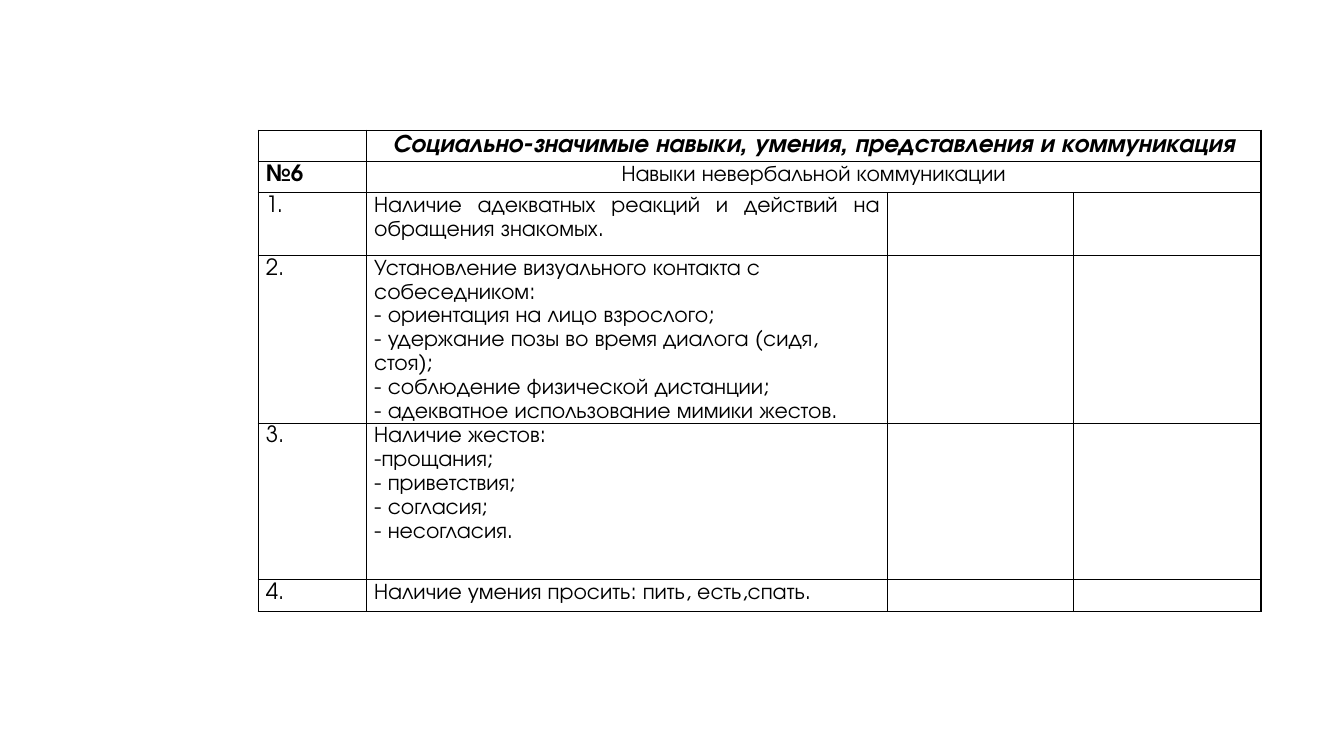
from lxml import etree
from pptx import Presentation
from pptx.dml.color import RGBColor
from pptx.enum.text import PP_ALIGN
from pptx.oxml.ns import qn
from pptx.util import Cm, Pt

LEFT, MID, JUST = PP_ALIGN.LEFT, PP_ALIGN.CENTER, PP_ALIGN.JUSTIFY
FACE = "TeX Gyre Adventor"
INK = "000000"


def color(code):
    return RGBColor.from_string(code)


def frame(cell):
    """Draw the four borders of a cell."""
    props = cell._tc.get_or_add_tcPr()
    for pos, side in enumerate(("a:lnL", "a:lnR", "a:lnT", "a:lnB")):
        line = etree.Element(qn(side), w=str(Pt(1)))
        fill = etree.SubElement(line, qn("a:solidFill"))
        etree.SubElement(fill, qn("a:srgbClr"), val=INK)
        props.insert(pos, line)


deck = Presentation()
deck.slide_width, deck.slide_height = Cm(33.87), Cm(19.05)
slide = deck.slides.add_slide(deck.slide_layouts[6])

# Table grid
widths = [2.73, 13.13, 4.68, 4.73]
heights = [0.79, 0.79, 1.58, 3.79, 3.95, 0.79]
shape = slide.shapes.add_table(len(heights), len(widths), Cm(6.51), Cm(3.28),
                               Cm(sum(widths)), Cm(sum(heights)))
table = shape.table
table.first_row = table.horz_banding = False
for col, width in zip(table.columns, widths):
    col.width = Cm(width)
for row, height in zip(table.rows, heights):
    row.height = Cm(height)

# Plain bordered cells
for cell in table.iter_cells():
    cell.margin_left = cell.margin_right = Cm(0.19)
    cell.margin_top = cell.margin_bottom = 0
    cell.fill.background()
    frame(cell)
    end = cell.text_frame.paragraphs[0]._p.get_or_add_endParaRPr()
    end.set("sz", "1600")
for row in (0, 1):
    table.cell(row, 1).merge(table.cell(row, 3))

# Wording: row, column, alignment, size, bold, italic, paragraphs
texts = [
    (0, 1, MID, 18, True, True,
     ["Социально-значимые навыки, умения, представления и коммуникация"]),
    (1, 0, JUST, 16, True, False, ["№6"]),
    (1, 1, MID, 16, False, False, ["Навыки невербальной коммуникации"]),
    (2, 1, JUST, 16, False, False,
     ["Наличие адекватных реакций и действий на обращения знакомых."]),
    (3, 1, LEFT, 16, False, False,
     ["Установление визуального контакта с собеседником:",
      "- ориентация на лицо взрослого;",
      "- удержание позы во время диалога (сидя, стоя);",
      "- соблюдение физической дистанции;",
      "- адекватное использование мимики жестов."]),
    (4, 1, JUST, 16, False, False,
     ["Наличие жестов:", "-прощания;", "- приветствия;", "- согласия;",
      "- несогласия."]),
    (5, 1, JUST, 16, False, False,
     ["Наличие умения просить: пить, есть,спать."]),
]
for num in range(1, 5):
    texts.append((num + 1, 0, JUST, 16, False, False, [f"{num}."]))

for row, col, align, size, bold, slant, lines in texts:
    body = table.cell(row, col).text_frame
    for pos, line in enumerate(lines):
        para = body.add_paragraph() if pos else body.paragraphs[0]
        para.alignment = align
        para.line_spacing = 1.15
        run = para.add_run()
        run.text = line
        font = run.font
        font.name, font.size = FACE, Pt(size)
        font.bold, font.italic = bold, slant
        font.color.rgb = color(INK)

deck.save("out.pptx")
